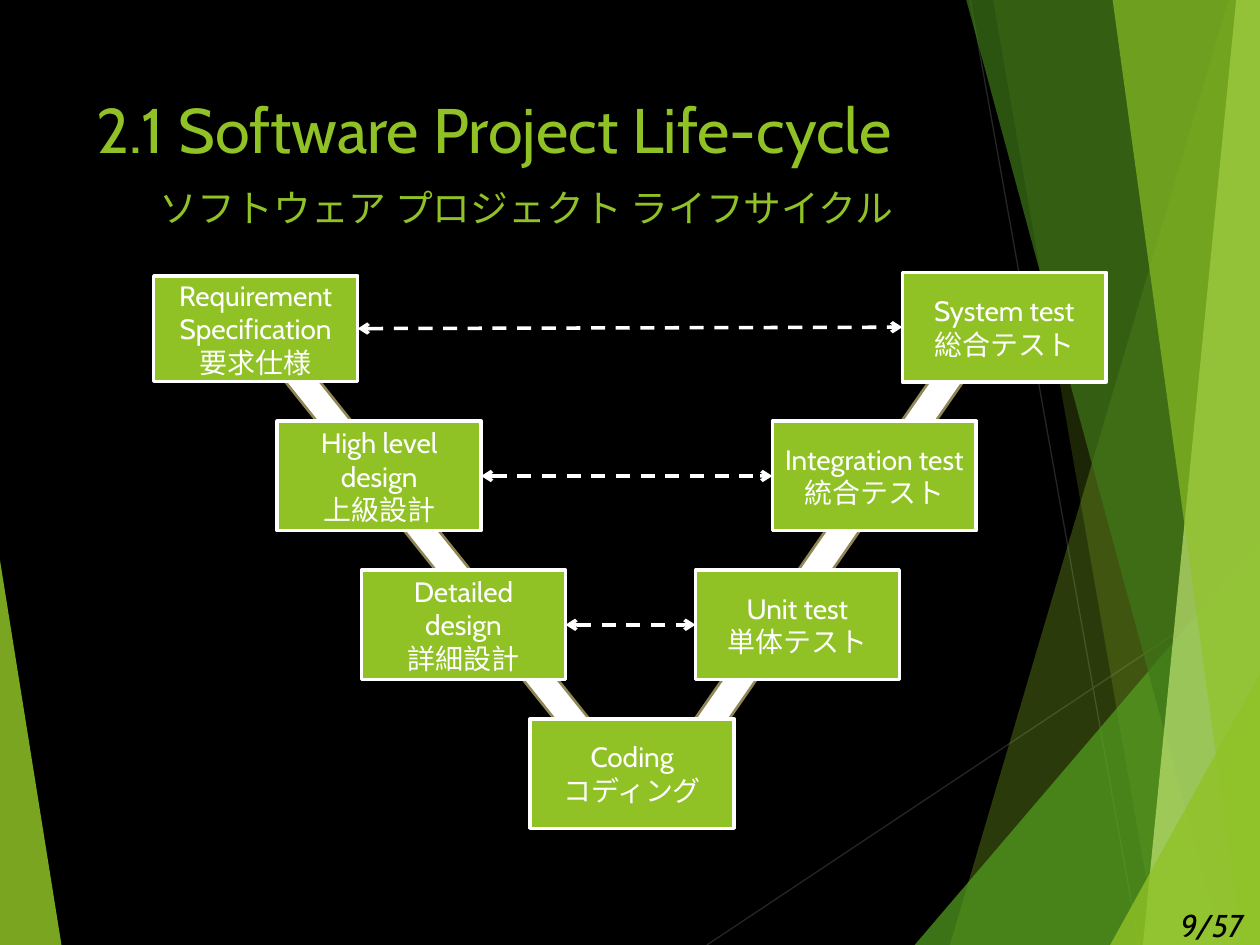
from dataclasses import dataclass

from lxml.etree import SubElement
from pptx import Presentation
from pptx.dml.color import RGBColor
from pptx.enum.dml import MSO_LINE as Dash
from pptx.enum.shapes import MSO_CONNECTOR as Connector, MSO_SHAPE as Shape
from pptx.enum.text import MSO_ANCHOR as Anchor, MSO_AUTO_SIZE as AutoSize, PP_ALIGN as Align
from pptx.oxml.ns import qn
from pptx.util import Cm, Pt

WIDTH, HEIGHT = 25.4, 19.05
BOX_WIDTH, BOX_HEIGHT = 4.11, 2.21
FIRST_ROW, ROW_STEP = 5.49, 3.0
RIGHT_SITE, LEFT_SITE = 3, 1


@dataclass(frozen=True)
class Theme:
    font: str = "Cabin"
    background: str = "000000"
    green: str = "90C226"
    mid_green: str = "54A021"
    dark_green: str = "3F7819"
    pale_green: str = "C0E474"
    hairline: str = "262626"
    white: str = "FFFFFF"
    stripe_edge: str = "918655"
    page_text: str = "000000"
    title_size: float = 36
    tab_size: float = 32.4
    subtitle_size: float = 21.6
    box_size: float = 16
    page_size: float = 18


class SlideWriter:
    def __init__(self, slide, theme):
        self.slide = slide
        self.theme = theme
        fill = slide.background.fill
        fill.solid()
        fill.fore_color.rgb = RGBColor.from_string(theme.background)

    def _style_font(self, font, size, color):
        font.name = self.theme.font
        font.size = Pt(size)
        font.color.rgb = RGBColor.from_string(color)

    def _paint(self, shape, fill, line=None, line_width=0):
        shape.shadow.inherit = False
        shape.fill.solid()
        shape.fill.fore_color.rgb = RGBColor.from_string(fill)
        if line is None:
            shape.line.fill.background()
        else:
            shape.line.color.rgb = RGBColor.from_string(line)
            shape.line.width = Pt(line_width)

    def facet(self, upper, lower, edge, color, opacity):
        """Fill the area between a slanted side and the vertical line x = edge."""
        corners = [upper, lower, (edge, lower[1]), (edge, upper[1])]
        points = [(Cm(x), Cm(y)) for x, y in corners]
        builder = self.slide.shapes.build_freeform(*points[0])
        builder.add_line_segments(points[1:], close=True)
        shape = builder.convert_to_shape()
        self._paint(shape, color)
        solid = shape.element.spPr.find(qn("a:solidFill"))
        SubElement(solid[0], qn("a:alpha")).set("val", str(opacity * 1000))

    def line(self, start, end, color, width):
        connector = self.slide.shapes.add_connector(
            Connector.STRAIGHT, *(Cm(value) for value in (*start, *end)))
        connector.line.color.rgb = RGBColor.from_string(color)
        connector.line.width = Pt(width)
        SubElement(connector.element.spPr, qn("a:effectLst"))
        return connector

    def link(self, left_box, right_box):
        """Join two boxes with a dashed double-headed arrow."""
        connector = self.line((0, 0), (1, 1), self.theme.white, 2)
        connector.begin_connect(left_box, RIGHT_SITE)
        connector.end_connect(right_box, LEFT_SITE)
        connector.line.dash_style = Dash.DASH
        outline = connector.element.spPr.find(qn("a:ln"))
        for end in ("a:headEnd", "a:tailEnd"):
            SubElement(outline, qn(end)).set("type", "arrow")

    def stripe(self, left, top, width, height, rotation):
        shape = self.slide.shapes.add_shape(
            Shape.DIAGONAL_STRIPE, Cm(left), Cm(top), Cm(width), Cm(height))
        shape.adjustments[0] = 0.91
        shape.rotation = rotation
        self._paint(shape, self.theme.white, self.theme.stripe_edge, 1.5)

    def box(self, text, left, top, height=BOX_HEIGHT):
        shape = self.slide.shapes.add_shape(
            Shape.RECTANGLE, Cm(left), Cm(top), Cm(BOX_WIDTH), Cm(height))
        self._paint(shape, self.theme.green, self.theme.white, 2)
        frame = shape.text_frame
        frame.word_wrap = True
        frame.vertical_anchor = Anchor.MIDDLE
        frame.text = text
        for para in frame.paragraphs:
            para.alignment = Align.CENTER
            self._style_font(para.font, self.theme.box_size, self.theme.white)
        return shape

    def title(self, heading, translation):
        theme = self.theme
        title = self.slide.shapes.title
        title.left, title.top, title.width, title.height = Cm(1.7), Cm(1.7), Cm(18.62), Cm(3.66)
        frame = title.text_frame
        frame.auto_size = AutoSize.NONE
        frame.vertical_anchor = Anchor.TOP
        para = frame.paragraphs[0]
        para.alignment = Align.LEFT
        self._style_font(para.font, theme.title_size, theme.green)
        para.add_run().text = heading
        para.add_line_break()
        for text, size in (("\t", theme.tab_size), (translation, theme.subtitle_size)):
            span = para.add_run()
            span.text = text
            span.font.size = Pt(size)

    def page_number(self, text):
        label = self.slide.shapes.add_textbox(Cm(23.55), Cm(18.14), Cm(1.85), Cm(1.02))
        frame = label.text_frame
        frame.word_wrap = False
        frame.auto_size = AutoSize.SHAPE_TO_FIT_TEXT
        para = frame.paragraphs[0]
        para.text = text
        para.font.italic = True
        self._style_font(para.font, self.theme.page_size, self.theme.page_text)


def draw_backdrop(page):
    theme = page.theme
    page.line((14.25, HEIGHT), (WIDTH, 11.63), theme.hairline, 0.75)
    page.line((19.56, 0), (22.96, HEIGHT), theme.hairline, 0.75)
    page.facet((0, 11.29), (1.24, HEIGHT), 0, theme.green, 85)
    right_facets = [
        ((24.77, 0), 19.15, theme.green, 30),
        ((20.02, 0), 23.34, theme.green, 20),
        ((WIDTH, 10.9), 18.44, theme.mid_green, 72),
        ((19.48, 0), 24.64, theme.dark_green, 70),
        ((24.92, 0), 23.04, theme.pale_green, 70),
        ((22.43, 0), 25.04, theme.green, 65),
        ((WIDTH, 13.59), 22.38, theme.green, 80),
    ]
    for upper, lower_x, color, opacity in right_facets:
        page.facet(upper, (lower_x, HEIGHT), WIDTH, color, opacity)


def draw_v_model(page):
    page.stripe(12.88, 6.27, 7.98, 10.19, 356.7)
    page.stripe(4.72, 6.63, 7.92, 9.47, 101.5)
    rows = [FIRST_ROW + ROW_STEP * index for index in range(4)]
    design = [
        page.box("Requirement Specification\v要求仕様", 3.1, 5.56, 2.13),
        page.box("High level design\v上級設計", 5.59, rows[1]),
        page.box("Detailed design\v詳細設計", 7.29, rows[2]),
    ]
    page.box("Coding\vコディング", 10.69, rows[3])
    tests = [
        page.box("System test\v総合テスト", 18.19, rows[0]),
        page.box("Integration test\v統合テスト", 15.57, rows[1]),
        page.box("Unit test\n単体テスト", 14.02, rows[2]),
    ]
    for left_box, right_box in zip(design, tests):
        page.link(left_box, right_box)


def main():
    deck = Presentation()
    deck.slide_width, deck.slide_height = Cm(WIDTH), Cm(HEIGHT)
    page = SlideWriter(deck.slides.add_slide(deck.slide_layouts[5]), Theme())
    draw_backdrop(page)
    page.title("2.1 Software Project Life-cycle", "ソフトウェア プロジェクト ライフサイクル")
    draw_v_model(page)
    page.page_number("9/57")
    deck.save("out.pptx")


if __name__ == "__main__":
    main()
